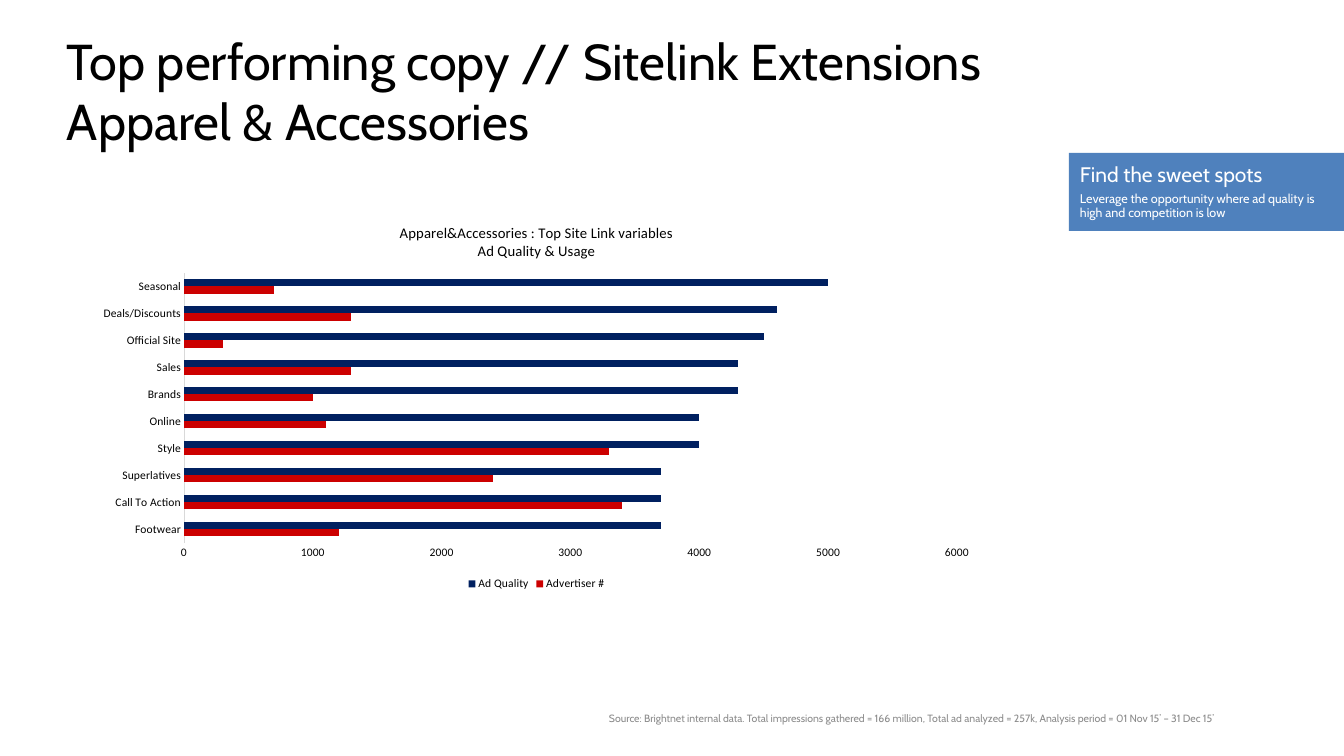
from lxml import etree
from pptx import Presentation
from pptx.chart.data import CategoryChartData
from pptx.dml.color import RGBColor
from pptx.enum.chart import XL_CHART_TYPE, XL_LEGEND_POSITION, XL_TICK_MARK
from pptx.enum.shapes import MSO_SHAPE
from pptx.enum.text import MSO_ANCHOR, PP_ALIGN
from pptx.oxml.ns import qn
from pptx.util import Pt

PX = 914400 / 75.6
SLIDE = (1344, 756)

TITLE = "Top performing copy // Sitelink Extensions\vApparel & Accessories"
SOURCE = (
    "Source: Brightnet internal data. Total impressions gathered = 166 million, "
    "Total ad analyzed = 257k, Analysis period = 01 Nov 15’ – 31 Dec 15’"
)
CALLOUT = [
    ("Find the sweet spots", 20),
    ("Leverage the opportunity where ad quality is high and competition is low", 12),
]
CHART_TITLE = ["Apparel&Accessories : Top Site Link variables", "Ad Quality & Usage"]
SERIES = [("Advertiser #", "CC0000"), ("Ad Quality", "002060")]
ROWS = [
    ("Footwear", 1200, 3700),
    ("Call To Action", 3400, 3700),
    ("Superlatives", 2400, 3700),
    ("Style", 3300, 4000),
    ("Online", 1100, 4000),
    ("Brands", 1000, 4300),
    ("Sales", 1300, 4300),
    ("Official Site", 300, 4500),
    ("Deals/Discounts", 1300, 4600),
    ("Seasonal", 700, 5000),
]

TITLE_BOX = (67, 30, 1210, 122)
SOURCE_BOX = (609, 712, 668, 19)
CALLOUT_BOX = (1069, 153, 275, 78)
CHART_BOX = (86, 209, 901, 385)
PLOT_BOX = (184, 273, 773, 270)


def emu(*lengths):
    return [round(length * PX) for length in lengths]


def colour(value):
    return RGBColor.from_string(value)


def set_all(target, values):
    for name, value in values.items():
        setattr(target, name, value)


def style(font, size, shade, name="Calibri"):
    set_all(font, {"size": Pt(size), "name": name, "bold": False})
    font.color.rgb = colour(shade)


def set_frame(frame, insets=(0, 0, 0, 0)):
    names = ("margin_left", "margin_top", "margin_right", "margin_bottom")
    set_all(frame, dict(zip(names, emu(*insets))))
    set_all(frame, {"word_wrap": True, "vertical_anchor": MSO_ANCHOR.TOP})


def write(paragraph, text, size, shade):
    paragraph.text = text
    paragraph.alignment = PP_ALIGN.LEFT
    for span in paragraph.runs:
        style(span.font, size, shade, "Cabin")


def add_title(page):
    title = page.shapes.title
    set_all(title, dict(zip(("left", "top", "width", "height"), emu(*TITLE_BOX))))
    set_frame(title.text_frame)
    write(title.text_frame.paragraphs[0], TITLE, 48, "000000")


def add_source(page):
    box = page.shapes.add_textbox(*emu(*SOURCE_BOX))
    set_frame(box.text_frame)
    write(box.text_frame.paragraphs[0], SOURCE, 10, "8C8C8C")


def add_callout(page):
    box = page.shapes.add_shape(MSO_SHAPE.RECTANGLE, *emu(*CALLOUT_BOX))
    box.shadow.inherit = False
    box.fill.solid()
    box.fill.fore_color.rgb = colour("4F81BD")
    box.line.fill.background()
    frame = box.text_frame
    set_frame(frame, (11, 11, 8, 8))
    for index, (text, size) in enumerate(CALLOUT):
        paragraph = frame.add_paragraph() if index else frame.paragraphs[0]
        write(paragraph, text, size, "FFFFFF")
        set_all(paragraph, {"line_spacing": 0.9, "space_after": Pt(6)})


def place_plot(chart):
    plot_area = chart.plots[0]._element.getparent()
    for old in plot_area.findall(qn("c:layout")):
        plot_area.remove(old)
    layout = etree.Element(qn("c:layout"))
    plot_area.insert(0, layout)
    manual = etree.SubElement(layout, qn("c:manualLayout"))
    left, top, width, height = CHART_BOX
    x, y, w, h = PLOT_BOX
    values = {
        "layoutTarget": "inner",
        "xMode": "edge",
        "yMode": "edge",
        "x": (x - left) / width,
        "y": (y - top) / height,
        "w": w / width,
        "h": h / height,
    }
    for name, value in values.items():
        etree.SubElement(manual, qn("c:" + name)).set("val", str(value))


def add_chart(page):
    names, *columns = zip(*ROWS)
    data = CategoryChartData()
    data.categories = names
    for (name, _), values in zip(SERIES, columns):
        data.add_series(name, values)
    chart = page.shapes.add_chart(
        XL_CHART_TYPE.BAR_CLUSTERED, *emu(*CHART_BOX), data
    ).chart
    style(chart.font, 10, "000000")

    frame = chart.chart_title.text_frame
    for index, text in enumerate(CHART_TITLE):
        paragraph = frame.add_paragraph() if index else frame.paragraphs[0]
        span = paragraph.add_run()
        span.text = text
        style(span.font, 14, "000000")
    chart.chart_title.include_in_layout = False

    plot = chart.plots[0]
    set_all(plot, {"gap_width": 182, "vary_by_categories": False})
    for series, (_, shade) in zip(plot.series, SERIES):
        series.format.fill.solid()
        series.format.fill.fore_color.rgb = colour(shade)

    for axis in (chart.category_axis, chart.value_axis):
        set_all(axis, {
            "major_tick_mark": XL_TICK_MARK.NONE,
            "minor_tick_mark": XL_TICK_MARK.NONE,
            "has_major_gridlines": False,
        })
        style(axis.tick_labels.font, 11, "000000")
    line = chart.category_axis.format.line
    line.width = Pt(0.75)
    line.color.rgb = colour("D9D9D9")
    chart.value_axis.format.line.fill.background()
    set_all(chart.value_axis, {
        "minimum_scale": 0, "maximum_scale": 6000, "major_unit": 1000,
    })

    chart.has_legend = True
    set_all(chart.legend, {
        "position": XL_LEGEND_POSITION.BOTTOM, "include_in_layout": False,
    })
    style(chart.legend.font, 11, "000000")
    place_plot(chart)


def main():
    deck = Presentation()
    set_all(deck, dict(zip(("slide_width", "slide_height"), emu(*SLIDE))))
    page = deck.slides.add_slide(deck.slide_layouts[5])
    add_title(page)
    add_source(page)
    add_callout(page)
    add_chart(page)
    deck.save("out.pptx")


if __name__ == "__main__":
    main()
